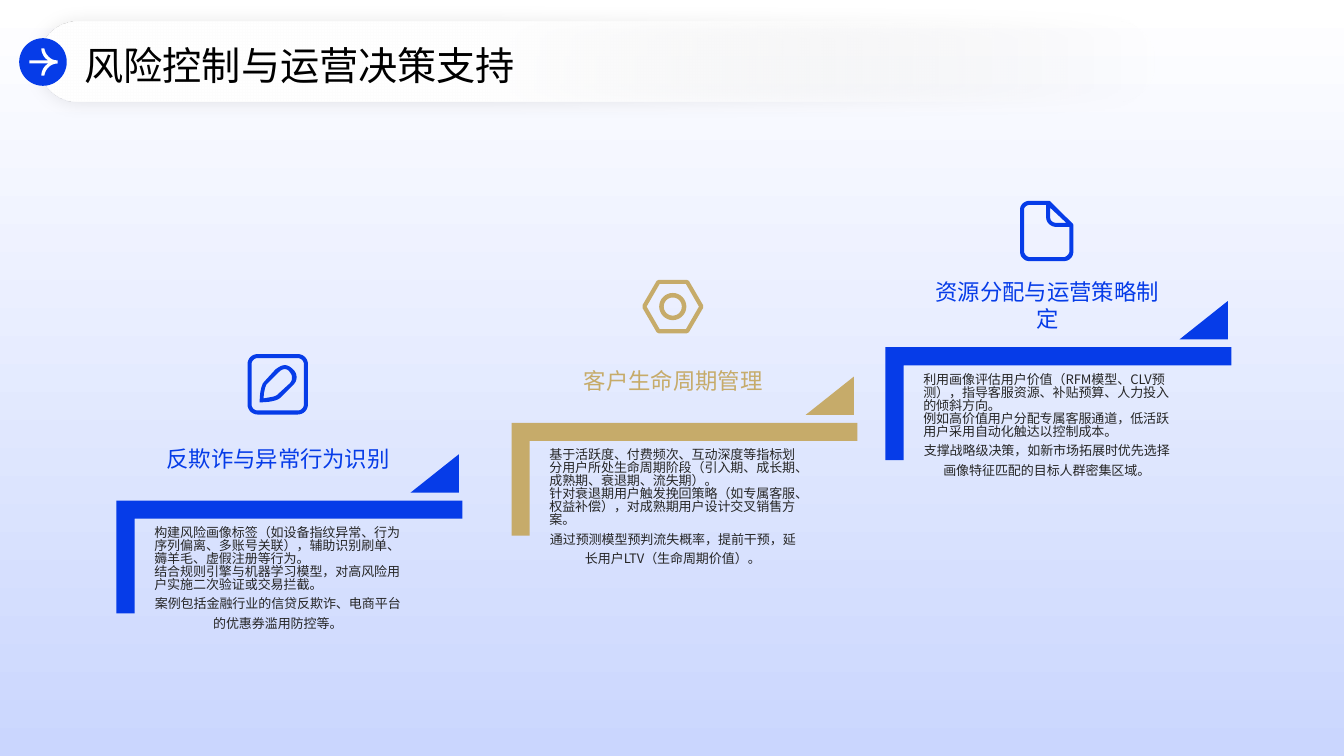
from dataclasses import dataclass

import pptx
import pptx.dml.color
import pptx.enum.shapes
import pptx.enum.text
import pptx.oxml
import pptx.oxml.ns
import pptx.util
from lxml import etree

Pt = pptx.util.Pt
SHAPES = pptx.enum.shapes.MSO_SHAPE
ALIGN = pptx.enum.text.PP_ALIGN
ANCHOR = pptx.enum.text.MSO_ANCHOR
qn = pptx.oxml.ns.qn


@dataclass(frozen=True)
class Theme:
    font: str = "Noto Sans CJK SC"
    blue: str = "063CE8"
    gold: str = "C6AB6A"
    white: str = "FFFFFF"
    sky: str = "CAD6FE"
    black: str = "000000"
    ink: str = "262626"
    title: float = 28
    heading: float = 16
    body: float = 9.3


THEME = Theme()
ICON_UNIT = 0.72  # points per icon grid unit


def rgb(colour):
    return pptx.dml.color.RGBColor.from_string(colour)


def paint(shape, colour):
    shape.shadow.inherit = False
    shape.line.fill.background()
    shape.fill.solid()
    shape.fill.fore_color.rgb = rgb(colour)


def add_shape(page, kind, left, top, width, height, colour):
    shape = page.shapes.add_shape(kind, Pt(left), Pt(top), Pt(width), Pt(height))
    paint(shape, colour)
    return shape


def add_gradient(shape, start, end, angle):
    shape.fill.gradient()
    shape.fill.gradient_angle = angle
    for stop, colour in zip(shape.fill.gradient_stops, (start, end)):
        stop.color.rgb = rgb(colour)


def write(shape, lines, size, colour, anchor=ANCHOR.TOP):
    """Fill a box with (text, alignment, line spacing) paragraphs."""
    frame = shape.text_frame
    frame.word_wrap = True
    frame.auto_size = pptx.enum.text.MSO_AUTO_SIZE.NONE
    frame.vertical_anchor = anchor
    frame.margin_left = frame.margin_top = frame.margin_right = frame.margin_bottom = 0
    frame.text = "\n".join(text for text, _, _ in lines)
    for para, (_, align, spacing) in zip(frame.paragraphs, lines):
        para.alignment = align
        para.line_spacing = spacing
        para.space_before = Pt(0)
        para.font.name = THEME.font
        para.font.size = Pt(size)
        para.font.color.rgb = rgb(colour)
    for props in shape.element.iter(qn("a:defRPr")):
        etree.SubElement(props, qn("a:ea")).set("typeface", THEME.font)


def add_text(page, left, top, width, height, *style):
    box = page.shapes.add_textbox(Pt(left), Pt(top), Pt(width), Pt(height))
    write(box, *style)


def flatten(contour, steps=8):
    """Turn points and cubic curves (six numbers) into a list of points."""
    points = []
    for node in contour:
        if len(node) == 2:
            points.append(node)
            continue
        x0, y0 = points[-1]
        x1, y1, x2, y2, x3, y3 = node
        for step in range(1, steps + 1):
            t = step / steps
            a, b, c, d = (1 - t) ** 3, 3 * t * (1 - t) ** 2, 3 * t * t * (1 - t), t ** 3
            points.append((a * x0 + b * x1 + c * x2 + d * x3,
                           a * y0 + b * y1 + c * y2 + d * y3))
    return points


def round_box(left, top, right, bottom, radius):
    k = radius * 0.45
    return [(left + radius, top), (right - radius, top),
            (right - k, top, right, top + k, right, top + radius),
            (right, bottom - radius),
            (right, bottom - k, right - k, bottom, right - radius, bottom),
            (left + radius, bottom),
            (left + k, bottom, left, bottom - k, left, bottom - radius),
            (left, top + radius),
            (left, top + k, left + k, top, left + radius, top)]


PEN = (60, 60, [
    round_box(0, 0, 60, 60, 10),
    round_box(4, 4, 56, 56, 6),
    [(37, 11), (40, 11, 43, 13, 45, 15), (50, 19, 50, 27, 45, 31), (33, 43),
     (29, 48, 12, 48, 12, 48), (12, 48, 12, 31, 17, 27), (28, 15),
     (31, 13, 34, 11, 37, 11)],
    [(37, 15), (35, 15, 33, 16, 31, 18), (19, 30), (18, 31, 16, 38, 16, 44),
     (22, 43, 29, 42, 30, 40), (42, 29), (45, 26, 45, 21, 42, 18),
     (41, 16, 39, 15, 37, 15)],
])
NUT = (60, 53, [
    [(16, 0), (44, 0), (46, 1), (60, 25), (60, 28), (46, 52), (44, 53),
     (16, 53), (14, 52), (0, 28), (0, 25), (14, 1)],
    [(17, 4), (4, 26.5), (17, 49), (43, 49), (56, 26.5), (43, 4)],
    round_box(16.5, 13, 43.5, 40, 13.5),
    round_box(21, 17.5, 39, 35.5, 9),
])
DOCUMENT = (53, 60, [
    [(53, 24), (53, 50), (53, 56, 49, 60, 43, 60), (10, 60),
     (4, 60, 0, 56, 0, 50), (0, 9), (0, 4, 4, 0, 10, 0), (29, 0), (30, 0.5), (52.5, 23)],
    [(30, 17), (30, 7), (46, 22), (36, 22), (33, 22, 30, 20, 30, 17)],
    [(49, 50), (49, 53, 46, 56, 43, 56), (10, 56), (7, 56, 4, 53, 4, 50), (4, 9),
     (4, 6, 7, 4, 10, 4), (26, 4), (26, 17), (26, 22, 31, 26, 36, 26), (49, 26)],
])
ARROW = (28, 27, [
    [(0, 12), (19, 12), (15, 10, 12, 5, 12, 0), (15, 0), (15.5, 6, 21, 12, 28, 12),
     (28, 15), (21, 15, 15.5, 21, 15, 27), (12, 27), (12, 22, 15, 17, 19, 15), (0, 15)],
])


def add_icon(page, icon, centre_x, centre_y, colour):
    width, height, contours = icon
    pen = None
    for contour in contours:
        points = [(x * 10, y * 10) for x, y in flatten(contour)]
        if pen is None:
            pen = page.shapes.build_freeform(*points[0], scale=Pt(ICON_UNIT / 10))
        else:
            pen.move_to(*points[0])
        pen.add_line_segments(points[1:], close=True)
    paint(pen.convert_to_shape(Pt(centre_x - width * ICON_UNIT / 2),
                               Pt(centre_y - height * ICON_UNIT / 2)), colour)


def add_backdrop(page, width, height):
    backdrop = add_shape(page, SHAPES.RECTANGLE, 0, 0, width, height, THEME.white)
    add_gradient(backdrop, THEME.white, THEME.sky, 270)


def add_step(page, left, top, colour, icon, heading, lines):
    """Place one stair step; left and top are the outer corner of its bracket."""
    length, depth = 247, 80.6
    bracket = add_shape(page, SHAPES.CORNER, left + (length - depth) / 2,
                        top + (depth - length) / 2, depth, length, colour)
    bracket.rotation = 90
    bracket.adjustments[0] = bracket.adjustments[1] = 0.161
    wedge = add_shape(page, SHAPES.ISOSCELES_TRIANGLE, left + 210, top - 33, 34.5, 27.4, colour)
    wedge.adjustments[0] = 1
    add_text(page, left + 30.5, top - 57.2, 170, 54, [(heading, ALIGN.CENTER, 1.0)],
             THEME.heading, colour, ANCHOR.MIDDLE)
    *points, closing = lines
    add_text(page, left + 27, top + 19, 176.4, 116.6,
             [(text, ALIGN.LEFT, 0.83) for text in points] + [(closing, ALIGN.CENTER, 1.25)],
             THEME.body, THEME.ink)
    add_icon(page, icon, left + 115.2, top - 83, colour)


def add_header(page, left, top, text):
    capsule = add_shape(page, SHAPES.ROUNDED_RECTANGLE, left, top, 797.8, 56.9, THEME.white)
    capsule.adjustments[0] = 0.5
    add_gradient(capsule, THEME.white, THEME.white, 180)
    clear, solid = capsule.element.spPr.iter(qn("a:gs"))
    etree.SubElement(clear[0], qn("a:alpha")).set("val", "0")
    solid.set("pos", "60000")
    effects = capsule.element.spPr.find(qn("a:effectLst"))
    effects.append(pptx.oxml.parse_xml(
        f'<a:outerShdw {pptx.oxml.ns.nsdecls("a")} blurRad="{Pt(13)}" dist="0" dir="0">'
        f'<a:srgbClr val="{THEME.black}"><a:alpha val="10000"/></a:srgbClr></a:outerShdw>'))
    title = page.shapes.title
    title.left, title.top, title.width, title.height = Pt(left + 33), Pt(top + 11.5), Pt(721), Pt(34)
    write(title, [(text, ALIGN.LEFT, 1.1)], THEME.title, THEME.black, ANCHOR.MIDDLE)
    page.shapes.element.append(title.element)  # bring in front of the capsule
    add_shape(page, SHAPES.OVAL, left - 13.7, top + 11.5, 34, 34, THEME.blue)
    add_icon(page, ARROW, left + 3.6, top + 28.5, THEME.white)


STEPS = [
    (632.5, 248, THEME.blue, DOCUMENT, "资源分配与运营策略制定", [
        "利用画像评估用户价值（RFM模型、CLV预测），指导客服资源、补贴预算、人力投入的倾斜方向。",
        "例如高价值用户分配专属客服通道，低活跃用户采用自动化触达以控制成本。",
        "支撑战略级决策，如新市场拓展时优先选择画像特征匹配的目标人群密集区域。"]),
    (365.4, 302, THEME.gold, NUT, "客户生命周期管理", [
        "基于活跃度、付费频次、互动深度等指标划分用户所处生命周期阶段（引入期、成长期、成熟期、衰退期、流失期）。",
        "针对衰退期用户触发挽回策略（如专属客服、权益补偿），对成熟期用户设计交叉销售方案。",
        "通过预测模型预判流失概率，提前干预，延长用户LTV（生命周期价值）。"]),
    (83.2, 357.5, THEME.blue, PEN, "反欺诈与异常行为识别", [
        "构建风险画像标签（如设备指纹异常、行为序列偏离、多账号关联），辅助识别刷单、薅羊毛、虚假注册等行为。",
        "结合规则引擎与机器学习模型，对高风险用户实施二次验证或交易拦截。",
        "案例包括金融行业的信贷反欺诈、电商平台的优惠券滥用防控等。"]),
]


def main():
    deck = pptx.Presentation()
    deck.slide_width, deck.slide_height = Pt(960), Pt(540)
    page = deck.slides.add_slide(deck.slide_layouts[5])
    add_backdrop(page, 960, 540)
    for step in STEPS:
        add_step(page, *step)
    add_header(page, 27.4, 15.8, "风险控制与运营决策支持")
    deck.save("out.pptx")


if __name__ == "__main__":
    main()
